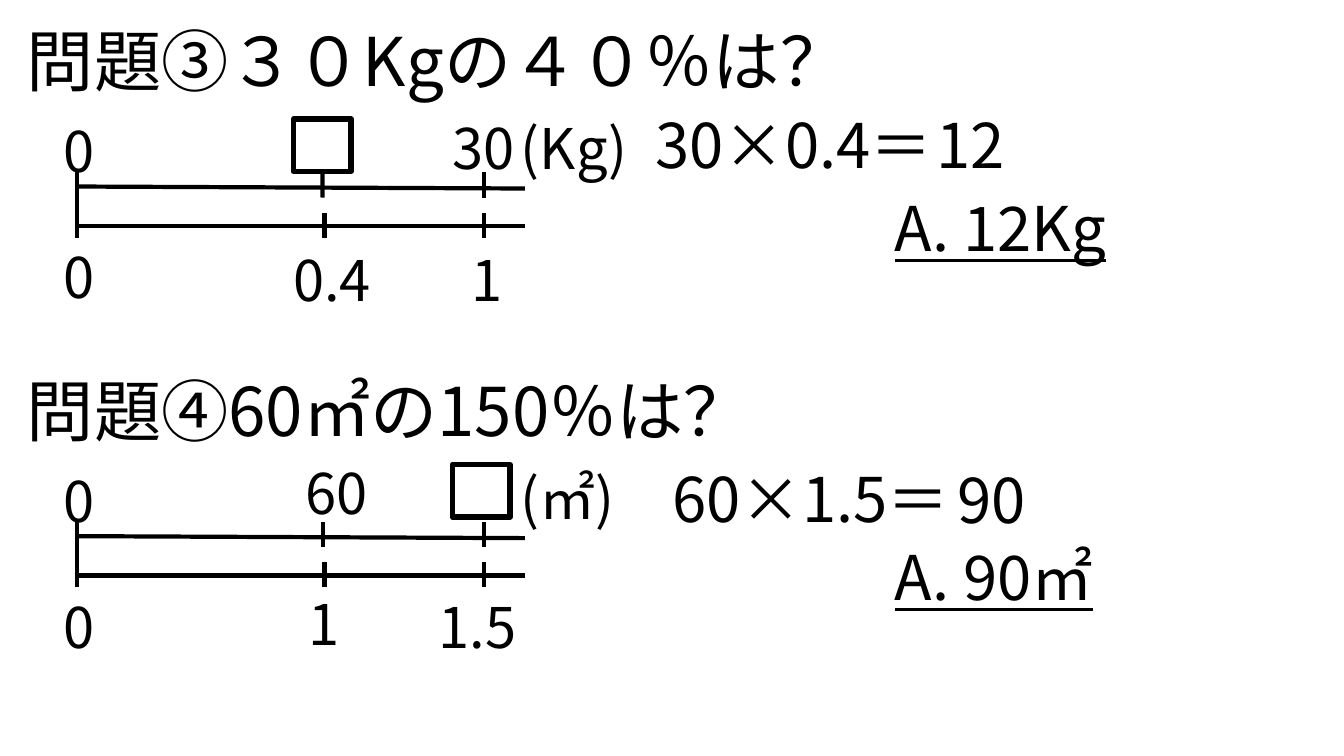
"""Builds a slide with two percentage problems, each with a double number line."""
from dataclasses import dataclass

from lxml import etree
from pptx import Presentation
from pptx.dml.color import RGBColor
from pptx.enum.shapes import MSO_CONNECTOR, MSO_SHAPE
from pptx.enum.text import MSO_AUTO_SIZE
from pptx.oxml.ns import qn
from pptx.util import Cm, Pt

STRAIGHT = MSO_CONNECTOR.STRAIGHT
RECTANGLE = MSO_SHAPE.RECTANGLE
GROW = MSO_AUTO_SIZE.SHAPE_TO_FIT_TEXT
BOX_BOTTOM = 2


@dataclass(frozen=True)
class Theme:
    font: str = "Noto Sans CJK JP"
    ink: RGBColor = RGBColor(0, 0, 0)
    question: int = 48
    working: int = 44
    label: int = 40
    scale_line: float = 3
    box_line: float = 4


THEME = Theme()
PROBLEMS = [
    {
        "question": "問題③３０Kgの４０％は？",
        "labels": [("1", 11.63, 5.69, 1.09), ("30", 11.15, 2.38, 2.2),
                   ("0.4", 7.14, 5.69, 2.64), ("(Kg)", 12.88, 2.38, 4.06)],
        "working": [("30×0.4＝", 16.26, 2.21, 8.31), ("12", 23.34, 2.21, 3.56)],
        "answer": ("A. 12Kg", 22.3, 4.29, 6.02),
        "unknown": (7.4, 2.64),
        "joined_tick": 8.13,
    },
    {
        "question": "問題④60㎡の150％は？",
        "labels": [("1", 7.52, 5.56, 1.09), ("1.5", 10.8, 5.64, 2.95),
                   ("60", 7.44, 2.26, 2.34), ("(㎡)", 12.88, 2.39, 4.06)],
        "working": [("60×1.5＝", 16.69, 2.31, 8.2), ("90", 23.88, 2.34, 3.56)],
        "answer": ("A. 90㎡", 22.3, 4.29, 8.2),
        "unknown": (11.4, 2.54),
        "joined_tick": None,
    },
]
ZEROS = [("0", 1.35, 5.63, 1.09), ("0", 1.35, 2.46, 1.09)]
SCALE_LINES = [(1.95, 4.34, 13.23, 4.39), (1.95, 5.33, 13.23, 5.33),
               (1.94, 5.63, 1.94, 3.98)]
UPPER_TICKS = [8.13, 12.19]
LOWER_TICKS = [8.18, 12.19]
FIRST_TOP, PROBLEM_STEP = 0.36, 8.81
BOX_WIDTH, BOX_HEIGHT = 1.45, 1.32


def add_text(slide, text, *, left, top, width, size, underline=False):
    height = size * 0.04 + 0.37
    holder = slide.shapes.add_textbox(Cm(left), Cm(top), Cm(width), Cm(height))
    frame = holder.text_frame
    frame.word_wrap = True
    frame.auto_size = GROW
    run = frame.paragraphs[0].add_run()
    run.text = text
    run.font.size = Pt(size)
    run.font.name = THEME.font
    run.font.color.rgb = THEME.ink
    if underline:
        run.font.underline = True
    east_asian = etree.SubElement(run.font._element, qn("a:ea"))
    east_asian.set("typeface", THEME.font)


def add_line(slide, x1, y1, x2, y2):
    line = slide.shapes.add_connector(STRAIGHT, Cm(x1), Cm(y1), Cm(x2), Cm(y2))
    line.line.color.rgb = THEME.ink
    line.line.width = Pt(THEME.scale_line)
    etree.SubElement(line._element.spPr, qn("a:effectLst"))
    return line


def add_unknown(slide, left, top):
    box = slide.shapes.add_shape(RECTANGLE, Cm(left), Cm(top),
                                 Cm(BOX_WIDTH), Cm(BOX_HEIGHT))
    box.shadow.inherit = False
    box.fill.background()
    box.line.color.rgb = THEME.ink
    box.line.width = Pt(THEME.box_line)
    return box


def add_problem(slide, problem, origin):
    add_text(slide, problem["question"], left=0.43, top=origin, width=33.02,
             size=THEME.question)
    for x1, y1, x2, y2 in SCALE_LINES:
        add_line(slide, x1, origin + y1, x2, origin + y2)
    box_left, box_top = problem["unknown"]
    unknown = add_unknown(slide, box_left, origin + box_top)
    for x in UPPER_TICKS:
        tick = add_line(slide, x, origin + 4.62, x, origin + 3.98)
        if x == problem["joined_tick"]:
            tick.end_connect(unknown, BOX_BOTTOM)
    for x in LOWER_TICKS:
        add_line(slide, x, origin + 5.63, x, origin + 5)
    for text, left, top, width in ZEROS + problem["labels"]:
        add_text(slide, text, left=left, top=origin + top, width=width,
                 size=THEME.label)
    for text, left, top, width in problem["working"]:
        add_text(slide, text, left=left, top=origin + top, width=width,
                 size=THEME.working)
    text, left, top, width = problem["answer"]
    add_text(slide, text, left=left, top=origin + top, width=width,
             size=THEME.working, underline=True)


def main():
    deck = Presentation()
    deck.slide_width, deck.slide_height = Cm(33.87), Cm(19.05)
    slide = deck.slides.add_slide(deck.slide_layouts[6])
    for index, problem in enumerate(PROBLEMS):
        add_problem(slide, problem, FIRST_TOP + index * PROBLEM_STEP)
    deck.save("out.pptx")


if __name__ == "__main__":
    main()
